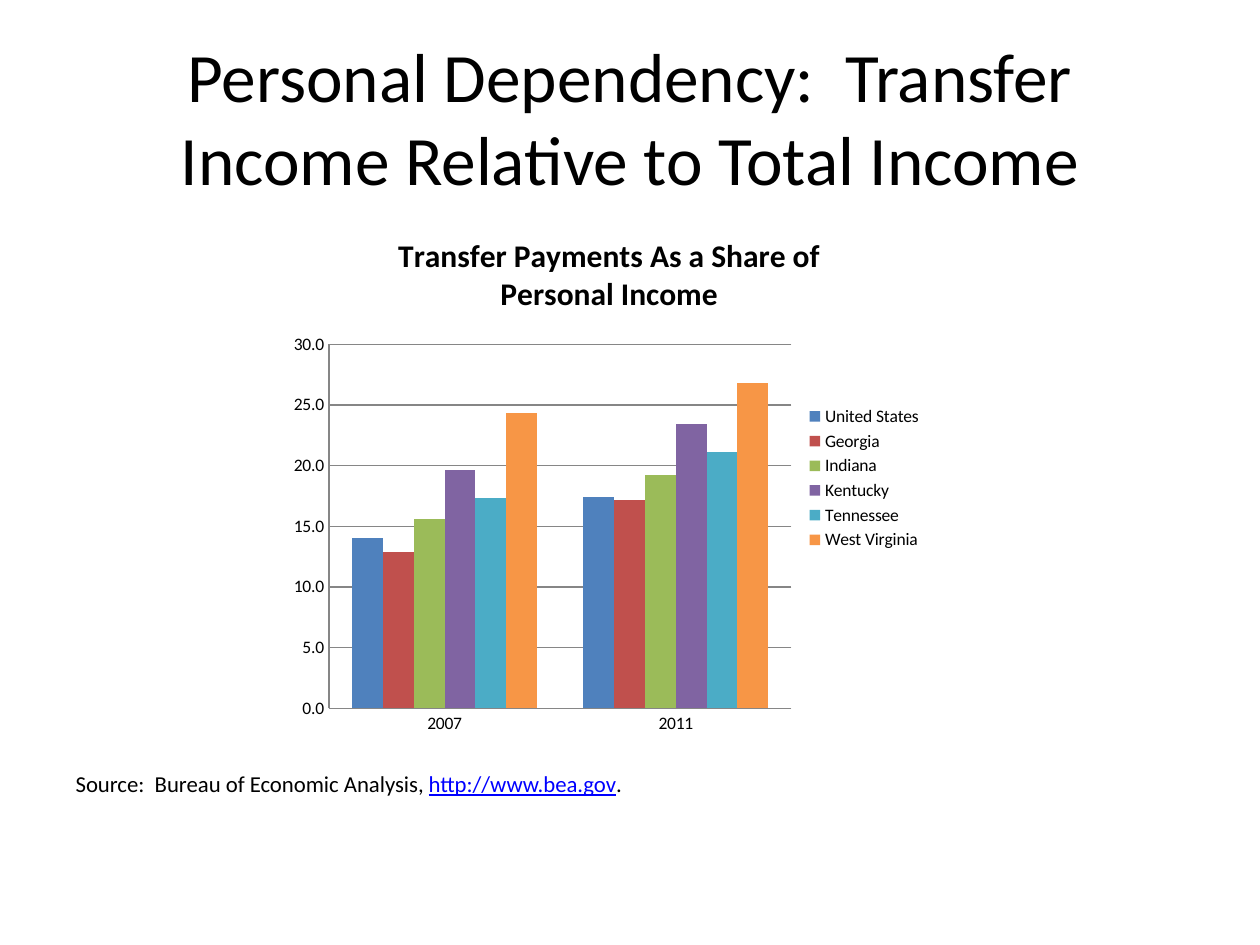
"""Build a slide comparing transfer payments as a share of personal income."""
import pptx
import pptx.chart.data
import pptx.dml.color
import pptx.enum.chart
import pptx.enum.text
import pptx.oxml
import pptx.oxml.ns
import pptx.util
import lxml.etree

RGBColor = pptx.dml.color.RGBColor
BLACK = RGBColor(0x00, 0x00, 0x00)
LINK_BLUE = RGBColor(0x00, 0x00, 0xFF)
GRAY = RGBColor(0x86, 0x86, 0x86)
FONT = "Calibri"
STATES = [
    ("United States", (14.0, 17.4), RGBColor(0x4F, 0x81, 0xBD)),
    ("Georgia", (12.9, 17.2), RGBColor(0xC0, 0x50, 0x4D)),
    ("Indiana", (15.6, 19.2), RGBColor(0x9B, 0xBB, 0x59)),
    ("Kentucky", (19.6, 23.4), RGBColor(0x80, 0x64, 0xA2)),
    ("Tennessee", (17.3, 21.1), RGBColor(0x4B, 0xAC, 0xC6)),
    ("West Virginia", (24.3, 26.8), RGBColor(0xF7, 0x96, 0x46)),
]


def style_font(font, size, color=BLACK, bold=False):
    font.name = FONT
    font.size = pptx.util.Pt(size)
    font.bold = bold
    font.color.rgb = color


presentation = pptx.Presentation()
presentation.slide_width = pptx.util.Inches(10)
presentation.slide_height = pptx.util.Inches(7.5)
slide = presentation.slides.add_slide(presentation.slide_layouts[1])
title, source = slide.placeholders
boxes = [(title, (0.5, 0.3, 9, 1.25)), (source, (0.5, 6.06, 9, 0.64))]
for placeholder, box in boxes:
    placeholder.left, placeholder.top, placeholder.width, placeholder.height = map(pptx.util.Inches, box)
    placeholder.text_frame.auto_size = pptx.enum.text.MSO_AUTO_SIZE.NONE

title.text_frame.text = "Personal Dependency:  Transfer Income Relative to Total Income"
title.text_frame.vertical_anchor = pptx.enum.text.MSO_ANCHOR.MIDDLE
paragraph = title.text_frame.paragraphs[0]
paragraph.alignment = pptx.enum.text.PP_ALIGN.CENTER
style_font(paragraph.font, 39.6)

paragraph = source.text_frame.paragraphs[0]
paragraph.space_before = pptx.util.Pt(0)
properties = paragraph._p.get_or_add_pPr()
properties.set("marL", "0")
properties.set("indent", "0")
lxml.etree.SubElement(properties, pptx.oxml.ns.qn("a:buNone"))
for text, color in [
    ("Source:  Bureau of Economic Analysis, ", BLACK),
    ("http://www.bea.gov", LINK_BLUE),
    (".", BLACK),
]:
    run = paragraph.add_run()
    run.text = text
    style_font(run.font, 13, color)
    run.font.underline = color == LINK_BLUE

chart_data = pptx.chart.data.CategoryChartData(number_format="0.0")
chart_data.categories = ["2007", "2011"]
for name, values, color in STATES:
    chart_data.add_series(name, values)
chart = slide.shapes.add_chart(
    pptx.enum.chart.XL_CHART_TYPE.COLUMN_CLUSTERED,
    *map(pptx.util.Inches, (2.25, 1.67, 5.17, 4.25)),
    chart_data,
).chart
style_font(chart.font, 10)
chart.chart_title.text_frame.text = "Transfer Payments As a Share of Personal Income"
style_font(chart.chart_title.text_frame.paragraphs[0].font, 18, bold=True)
chart.has_legend = True
chart.legend.position = pptx.enum.chart.XL_LEGEND_POSITION.RIGHT
chart.legend.include_in_layout = False

plot = chart.plots[0]
plot.gap_width = 150
plot.overlap = 0
plot.vary_by_categories = False
for series, (name, values, color) in zip(plot.series, STATES):
    series.format.fill.solid()
    series.format.fill.fore_color.rgb = color

chart.value_axis.minimum_scale = 0
chart.value_axis.maximum_scale = 30
chart.value_axis.major_unit = 5
chart.value_axis.has_major_gridlines = True
chart.value_axis.tick_labels.number_format = "0.0"
chart.value_axis.tick_labels.number_format_is_linked = False
for axis in (chart.category_axis, chart.value_axis):
    axis.major_tick_mark = pptx.enum.chart.XL_TICK_MARK.NONE
for line in (
    chart.category_axis.format.line,
    chart.value_axis.format.line,
    chart.value_axis.major_gridlines.format.line,
):
    line.color.rgb = GRAY
    line.width = pptx.util.Pt(0.75)

plot_area = chart._chartSpace.chart.plotArea
for layout in plot_area.findall(pptx.oxml.ns.qn("c:layout")):
    plot_area.remove(layout)
layout = pptx.oxml.parse_xml(
    f'<c:layout {pptx.oxml.ns.nsdecls("c")}><c:manualLayout>'
    '<c:layoutTarget val="inner"/><c:xMode val="edge"/><c:yMode val="edge"/>'
    '<c:x val="0.07"/><c:y val="0.25"/><c:w val="0.71"/><c:h val="0.68"/>'
    "</c:manualLayout></c:layout>"
)
plot_area.insert(0, layout)

presentation.save("out.pptx")
